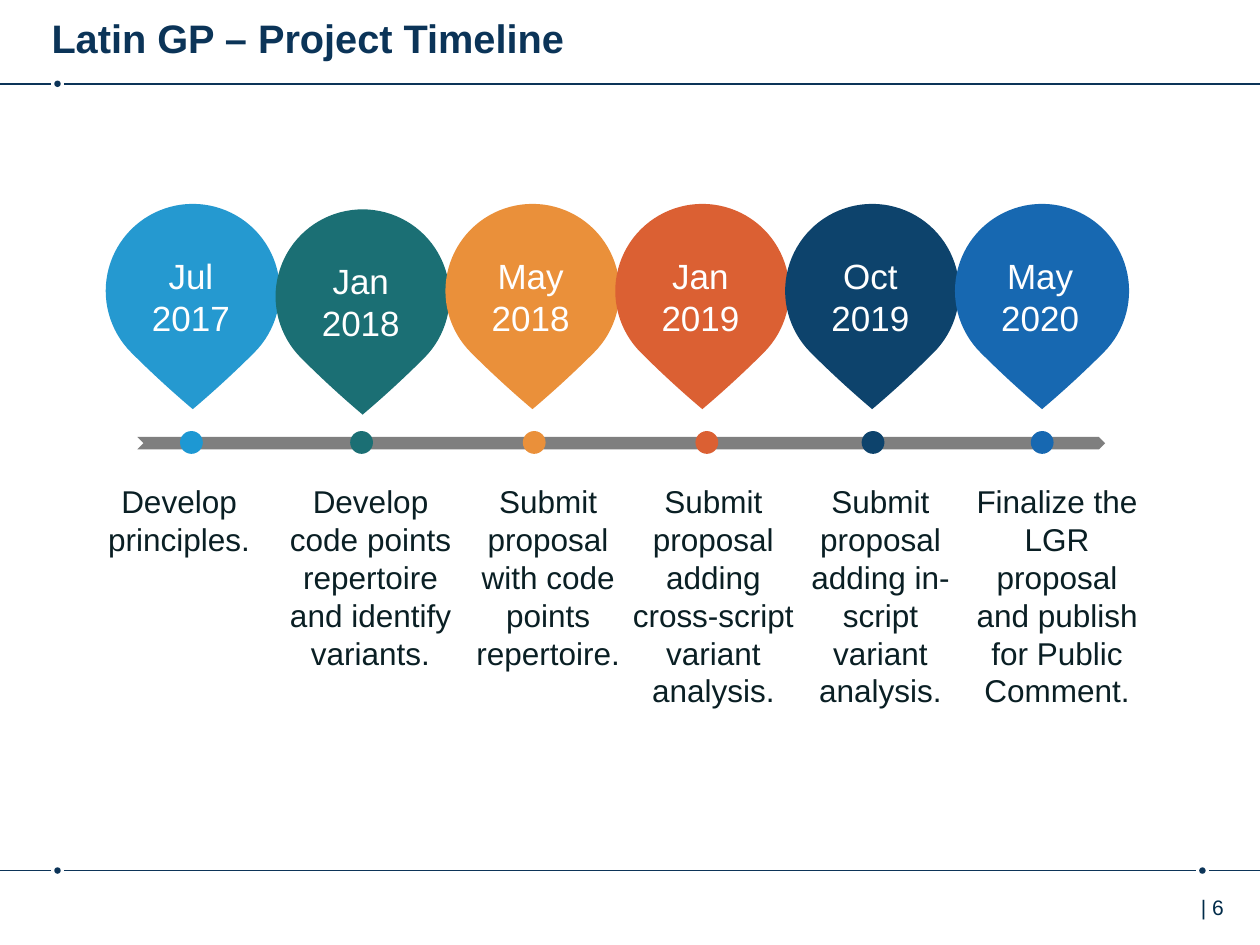
from lxml import etree
from pptx import Presentation
from pptx.dml.color import RGBColor
from pptx.enum.shapes import MSO_CONNECTOR, MSO_SHAPE as SHAPE
from pptx.enum.text import MSO_ANCHOR as ANCHOR, PP_ALIGN as ALIGN
from pptx.oxml.ns import qn
from pptx.util import Cm, Pt

NAVY = "0C3458"
WIDTH, HEIGHT = 25.4, 19.05
PIN_LEFT, PIN_STEP, PIN_SIZE = 2.13, 3.424, 3.51

# Date, colour, pin top, dot left, description left and width, description
MILESTONES = [
    ("Jul\n2017", "2599D0", 4.11, 3.63, 1.68, 3.86, "Develop principles."),
    ("Jan\n2018", "1B6F74", 4.22, 7.06, 5.49, 3.96,
     "Develop code points repertoire and identify variants."),
    ("May\n2018", "EA903A", 4.11, 10.54, 9.12, 3.86,
     "Submit proposal with code points repertoire."),
    ("Jan\n2019", "DB6033", 4.11, 14.02, 12.45, 3.86,
     "Submit proposal adding cross-script variant analysis."),
    ("Oct\n2019", "0D436C", 4.11, 17.37, 16.1, 3.3,
     "Submit proposal adding in-script variant analysis."),
    ("May\n2020", "1768B1", 4.11, 20.78, 19.38, 3.86,
     "Finalize the LGR proposal and publish for Public Comment."),
]


def rgb(color):
    return RGBColor.from_string(color)


def add_text(s, text, x, y, w, h, size=18, color="0A1F24", bold=False,
             align=ALIGN.CENTER, anchor=ANCHOR.TOP, inset=0.25):
    tf = s.shapes.add_textbox(Cm(x), Cm(y), Cm(w), Cm(h)).text_frame
    tf.word_wrap = True
    tf.vertical_anchor = anchor
    tf.margin_left = tf.margin_right = Cm(inset)
    tf.text = text
    for p in tf.paragraphs:
        p.alignment = align
        p.font.name = "Arial"
        p.font.size = Pt(size)
        p.font.bold = bold
        p.font.color.rgb = rgb(color)


def add_filled(s, kind, x, y, w, h, color):
    sp = s.shapes.add_shape(kind, Cm(x), Cm(y), Cm(w), Cm(h))
    sp.shadow.inherit = False
    sp.fill.solid()
    sp.fill.fore_color.rgb = rgb(color)
    sp.line.fill.background()
    return sp


def add_rule(s, x1, x2, y):
    line = s.shapes.add_connector(MSO_CONNECTOR.STRAIGHT,
                                  Cm(x1), Cm(y), Cm(x2), Cm(y))
    line.line.color.rgb = rgb(NAVY)
    line.line.width = Pt(1)
    etree.SubElement(line._element.spPr, qn("a:effectLst"))


def add_dotted_rule(s, y, dots):
    """Full-width rule, broken around a small dot at each given centre."""
    gap, size = 0.13, 0.13
    start = 0
    for x in dots:
        add_rule(s, start, x - gap, y)
        add_filled(s, SHAPE.OVAL, x - size / 2, y - size / 2, size, size, NAVY)
        start = x + gap
    add_rule(s, start, WIDTH, y)


def add_pin(s, date, x, y, color):
    pin = add_filled(s, SHAPE.TEAR, x, y, PIN_SIZE, PIN_SIZE, color)
    pin.adjustments[0] = 0.96
    pin.rotation = 135
    add_text(s, date, x + 0.07, y + 0.89, 3.3, 1.8, size=20, color="FFFFFF")


def main():
    prs = Presentation()
    prs.slide_width, prs.slide_height = Cm(WIDTH), Cm(HEIGHT)
    s = prs.slides.add_slide(prs.slide_layouts[6])

    # Frame: rules, page number and title
    add_dotted_rule(s, 1.69, [1.16])
    add_dotted_rule(s, 17.55, [1.16, 24.24])
    add_text(s, "| 6", 24.21, 17.91, 1.1, 1, size=12, color="002B49",
             align=ALIGN.LEFT, inset=0)
    add_text(s, "Latin GP – Project Timeline", 1.04, 0.13, 22.25, 1.24,
             size=22.7, color="0B3458", bold=True, align=ALIGN.LEFT,
             anchor=ANCHOR.BOTTOM, inset=0)

    # Timeline bar
    add_filled(s, SHAPE.CHEVRON, 2.77, 8.81, 19.51, 0.25, "7F7F7F")

    # Milestones: pin, dot and description
    for i, (date, color, top, dot, left, width, text) in enumerate(MILESTONES):
        add_pin(s, date, PIN_LEFT + i * PIN_STEP, top, color)
        dot_color = "1D98D3" if i == 0 else color
        add_filled(s, SHAPE.OVAL, dot, 8.69, 0.46, 0.46, dot_color)
        add_text(s, text, left, 9.6, width, 4.37)

    prs.save("out.pptx")


if __name__ == "__main__":
    main()
